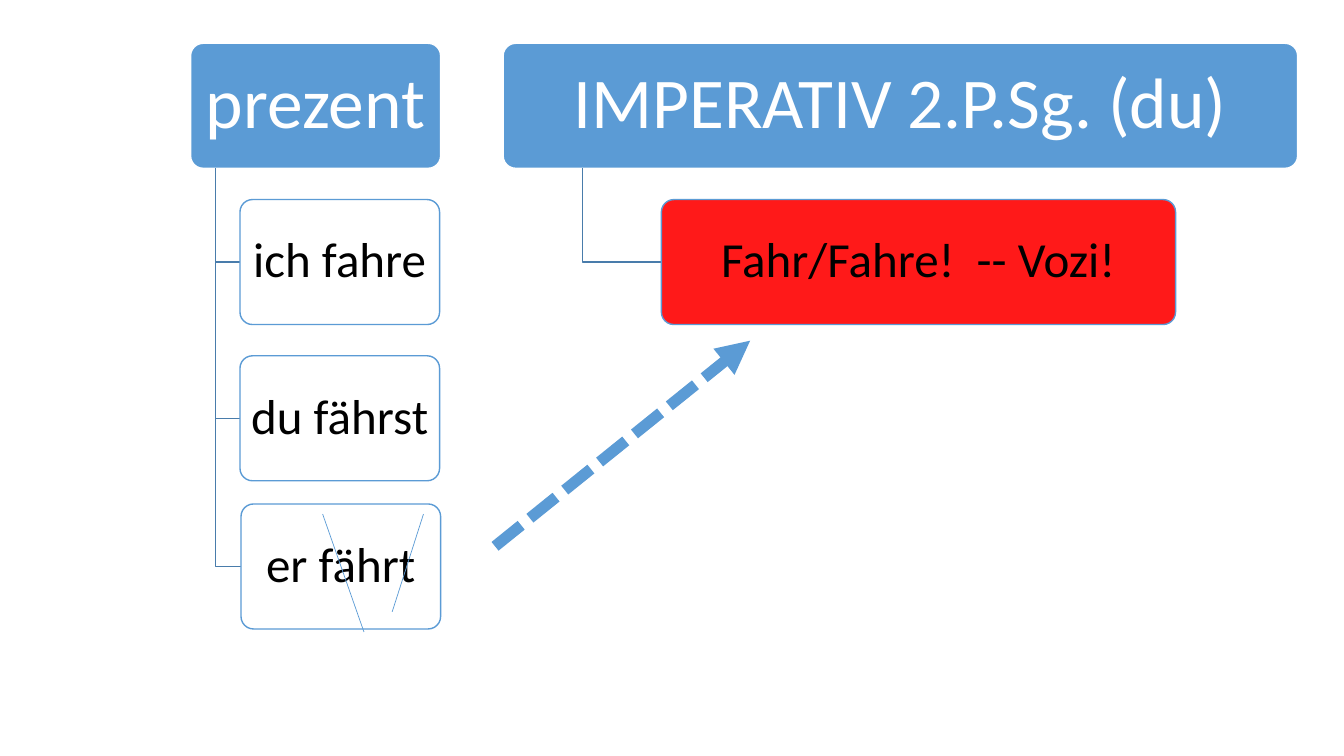
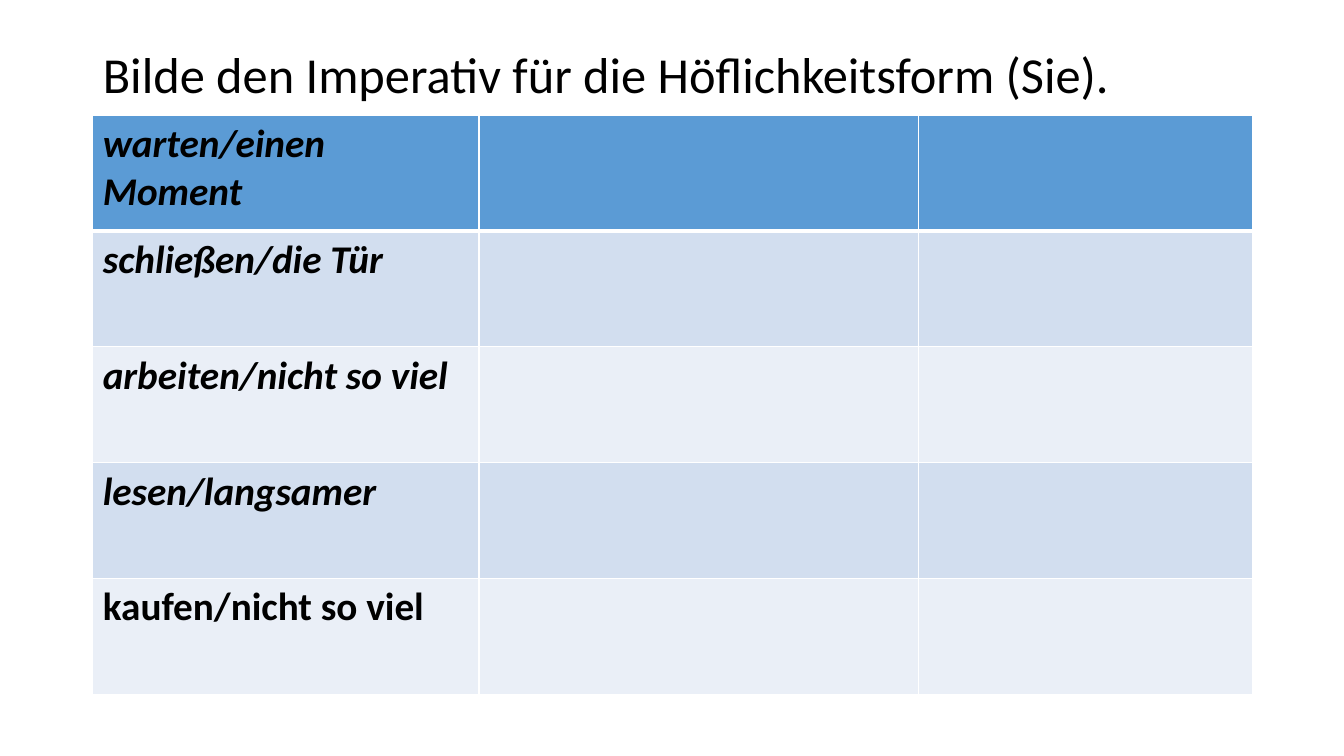
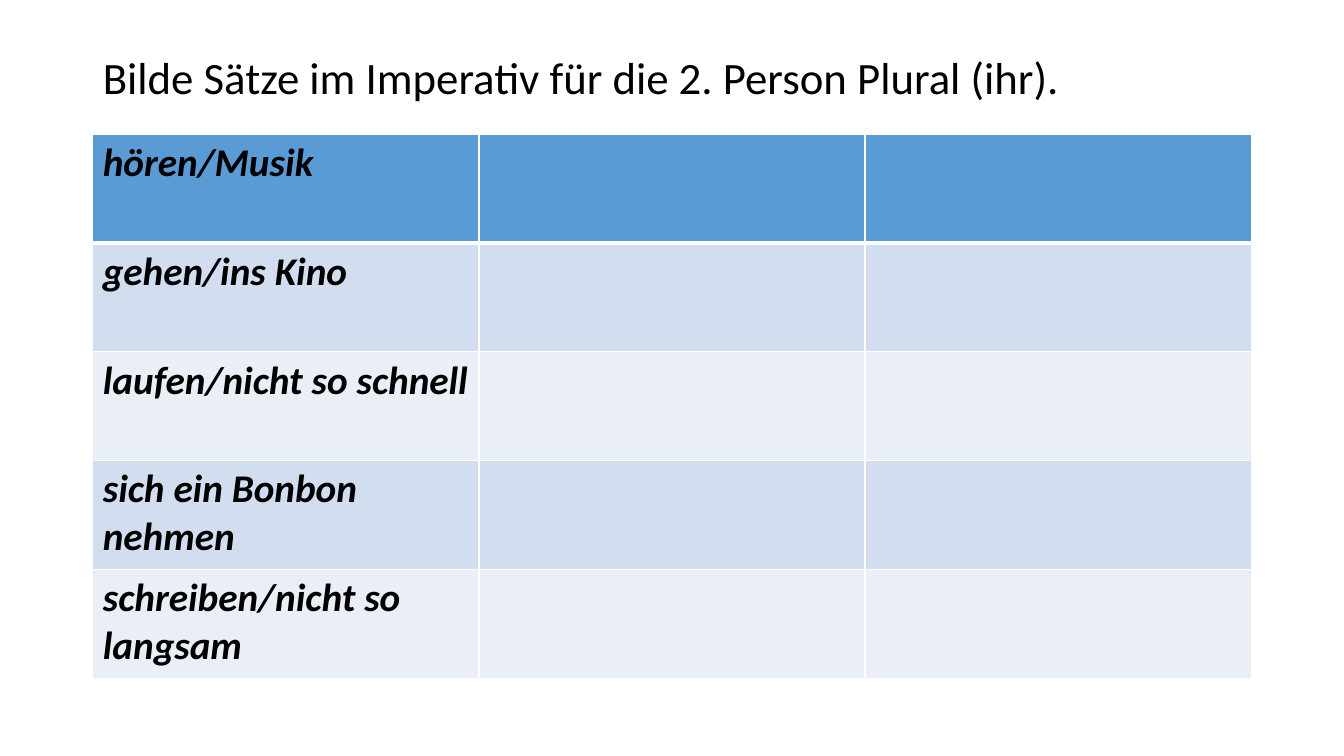
from pptx import Presentation
from pptx.dml.color import RGBColor
from pptx.enum.dml import MSO_LINE
from pptx.enum.shapes import MSO_CONNECTOR, MSO_SHAPE
from pptx.enum.text import MSO_ANCHOR, MSO_AUTO_SIZE, PP_ALIGN
from pptx.oxml.ns import qn
from pptx.util import Inches, Pt
from lxml.etree import SubElement

BLUE = RGBColor(0x5B, 0x9B, 0xD5)
DARK_BLUE = RGBColor(0x49, 0x7C, 0xAB)
BAND_DARK = RGBColor(0xD2, 0xDE, 0xEF)
BAND_LIGHT = RGBColor(0xEA, 0xEF, 0xF7)
RED = RGBColor(0xFF, 0x00, 0x00)
WHITE = RGBColor(0xFF, 0xFF, 0xFF)
BLACK = RGBColor(0x00, 0x00, 0x00)

FONT = "Calibri"
TITLE_ONLY, BLANK = 5, 6
BOX_HEIGHT = 1.24
HEAD_TOP = 0.43


def write(tf, text, size, color=BLACK, bold=False, italic=False,
          align=PP_ALIGN.LEFT, spacing=None):
    p = tf.paragraphs[0]
    p.alignment = align
    p.line_spacing = spacing
    r = p.add_run()
    r.text = text
    f = r.font
    f.name, f.size, f.bold, f.italic = FONT, Pt(size), bold, italic
    f.color.rgb = color


def add_border(cell, side, width):
    ln = SubElement(cell._tc.get_or_add_tcPr(), qn(f"a:ln{side}"), w=str(Pt(width)))
    SubElement(SubElement(ln, qn("a:solidFill")), qn("a:srgbClr"), val=str(WHITE))


class Deck:
    def __init__(self):
        self.prs = Presentation()
        self.prs.slide_width = Inches(13.33)
        self.prs.slide_height = Inches(7.5)
        self.s = None

    def add_slide(self, layout):
        self.s = self.prs.slides.add_slide(self.prs.slide_layouts[layout])

    def title(self, text, height, size):
        sp = self.s.shapes.title
        sp.left, sp.top = Inches(0.92), Inches(0.4)
        sp.width, sp.height = Inches(11.5), Inches(height)
        tf = sp.text_frame
        tf.auto_size = MSO_AUTO_SIZE.NONE
        tf.vertical_anchor = MSO_ANCHOR.MIDDLE
        write(tf, text, size, spacing=0.9)

    def box(self, text, x, y, w, size, fill, line, color, alpha=100):
        sp = self.s.shapes.add_shape(MSO_SHAPE.ROUNDED_RECTANGLE, Inches(x),
                                     Inches(y), Inches(w), Inches(BOX_HEIGHT))
        sp.adjustments[0] = 0.1
        sp.shadow.inherit = False
        sp.fill.solid()
        sp.fill.fore_color.rgb = fill
        if alpha < 100:
            clr = sp._element.spPr.find(qn("a:solidFill"))[0]
            SubElement(clr, qn("a:alpha"), val=str(alpha * 1000))
        sp.line.color.rgb = line
        sp.line.width = Pt(1)
        tf = sp.text_frame
        tf.word_wrap = False
        tf.vertical_anchor = MSO_ANCHOR.MIDDLE
        write(tf, text, size, color, align=PP_ALIGN.CENTER, spacing=0.9)

    def elbow(self, x, top, right, bottom):
        fb = self.s.shapes.build_freeform(Inches(x), Inches(top))
        corners = [(x, bottom), (right, bottom)]
        fb.add_line_segments([(Inches(a), Inches(b)) for a, b in corners], close=False)
        sp = fb.convert_to_shape()
        sp.shadow.inherit = False
        sp.fill.background()
        sp.line.color.rgb = DARK_BLUE
        sp.line.width = Pt(1)

    def branch(self, head, x, w, children):
        stem = x + 0.1 * w
        head_bottom = HEAD_TOP + BOX_HEIGHT
        self.box(head, x, HEAD_TOP, w, 51, BLUE, WHITE, WHITE)
        for text, left, top, width, fill in children:
            self.elbow(stem, head_bottom, left, top + BOX_HEIGHT / 2)
            self.box(text, left, top, width, 35, fill, BLUE, BLACK, alpha=90)

    def line(self, start, end, width=0.5, arrow=False):
        sp = self.s.shapes.add_connector(MSO_CONNECTOR.STRAIGHT,
                                         *map(Inches, start + end))
        sp.line.color.rgb = BLUE
        sp.line.width = Pt(width)
        if arrow:
            sp.line.dash_style = MSO_LINE.ROUND_DOT
            sp.line.dash_style = MSO_LINE.SQUARE_DOT
            SubElement(sp.line._get_or_add_ln(), qn("a:tailEnd"), type="triangle")
        SubElement(sp._element.spPr, qn("a:effectLst"))

    def table(self, verbs, top, row_height, widths, upright=()):
        frame = self.s.shapes.add_table(
            len(verbs), len(widths), Inches(0.92), Inches(top),
            Inches(sum(widths)), Inches(row_height * len(verbs)))
        table = frame.table
        for column, width in zip(table.columns, widths):
            column.width = Inches(width)
        for i, verb in enumerate(verbs):
            table.rows[i].height = Inches(row_height)
            fill = BLUE if i == 0 else BAND_DARK if i % 2 else BAND_LIGHT
            borders = {"L": 1, "R": 1, "T": 3 if i == 1 else 1, "B": 1 if i else 3}
            for cell in table.rows[i].cells:
                for side, width in borders.items():
                    add_border(cell, side, width)
                cell.fill.solid()
                cell.fill.fore_color.rgb = fill
            write(table.cell(i, 0).text_frame, verb, 28, bold=True,
                  italic=verb not in upright)


def main():
    deck = Deck()

    deck.add_slide(BLANK)
    deck.branch("prezent", 1.89, 2.48, [
        ("ich fahre", 2.38, 1.98, 1.98, WHITE),
        ("du fährst", 2.38, 3.53, 1.98, WHITE),
        ("er fährt", 2.39, 5, 1.98, WHITE),
    ])
    deck.branch("IMPERATIV 2.P.Sg. (du)", 4.99, 7.88, [
        ("Fahr/Fahre!  -- Vozi!", 6.56, 1.98, 5.1, RED),
    ])
    deck.line((3.89, 6.07), (4.2, 5.1))
    deck.line((3.2, 5.1), (3.61, 6.27))
    deck.line((4.91, 5.42), (7.44, 3.38), width=8, arrow=True)

    deck.add_slide(TITLE_ONLY)
    deck.title("Bilde den Imperativ für die Höflichkeitsform (Sie).", 0.74, 36)
    deck.table(["warten/einen Moment", "schließen/die Tür", "arbeiten/nicht so viel",
                "lesen/langsamer", "kaufen/nicht so viel"],
               1.14, 1.15, [3.83, 4.36, 3.31], upright=["kaufen/nicht so viel"])

    deck.add_slide(TITLE_ONLY)
    deck.title("Bilde Sätze im Imperativ für die 2. Person Plural (ihr).", 0.79, 32)
    deck.table(["hören/Musik", "gehen/ins Kino", "laufen/nicht so schnell",
                "sich ein Bonbon nehmen", "schreiben/nicht so langsam"],
               1.33, 1.08, [3.83] * 3)

    deck.prs.save("out.pptx")


if __name__ == "__main__":
    main()
